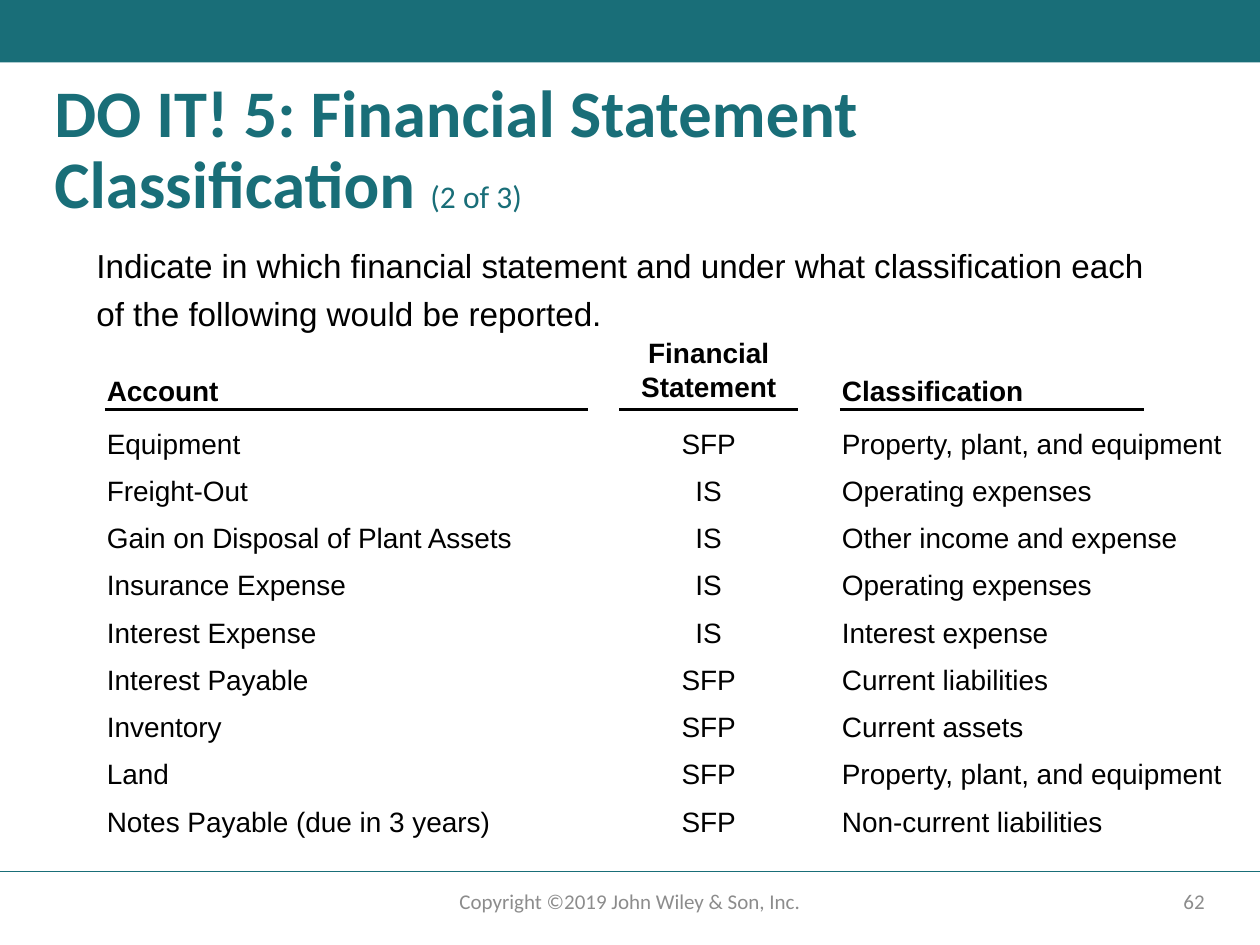
from pptx import Presentation
from pptx.dml.color import RGBColor as Rgb
from pptx.enum.shapes import MSO_CONNECTOR as Conn, MSO_SHAPE as Kind
from pptx.enum.text import MSO_ANCHOR as Anchor, PP_ALIGN as Align
from pptx.oxml.ns import qn
from pptx.util import Inches, Pt
from lxml.etree import SubElement

# Grid of 120 columns by 90 rows; every box is (left, top, width, height)
COLS, ROWS = 120, 90
WIDE, HIGH = Inches(10), Inches(7.5)
HUES = {"teal": "196E78", "ink": "000000", "gray": "8C8C8C", "paper": "FFFFFF"}

BODY = {"name": "Arial", "size": Pt(16), "bold": False}
HEAD = {**BODY, "bold": True}
LEAD = {**BODY, "size": Pt(19)}
TITLE = {"name": "Calibri", "size": Pt(38), "bold": True}
PART = {**TITLE, "size": Pt(18), "bold": False}
FOOT = {**PART, "size": Pt(12)}

# Column name, text left, text width, rule left, rule width, alignment
FIELDS = [
    ("Account", 9, 49, 10, 46, Align.LEFT),
    ("Financial Statement", 59, 17, 59, 17, Align.CENTER),
    ("Classification", 79, 39, 80, 29, Align.LEFT),
]
ITEMS = [
    ("Equipment", "SFP", "Property, plant, and equipment"),
    ("Freight-Out", "IS", "Operating expenses"),
    ("Gain on Disposal of Plant Assets", "IS", "Other income and expense"),
    ("Insurance Expense", "IS", "Operating expenses"),
    ("Interest Expense", "IS", "Interest expense"),
    ("Interest Payable", "SFP", "Current liabilities"),
    ("Inventory", "SFP", "Current assets"),
    ("Land", "SFP", "Property, plant, and equipment"),
    ("Notes Payable (due in 3 years)", "SFP", "Non-current liabilities"),
]


def place(box):
    x, y, w, h = box
    col, row = WIDE / COLS, HIGH / ROWS
    return [round(n) for n in (x * col, y * row, w * col, h * row)]


def block(slide, box, hue):
    shape = slide.shapes.add_shape(Kind.RECTANGLE, *place(box))
    shape.shadow.inherit = False
    shape.fill.solid()
    shape.fill.fore_color.rgb = Rgb.from_string(HUES[hue])
    shape.line.fill.background()
    return shape


def rule(slide, x, y, w, hue, width):
    left, top, span, _ = place((x, y, w, 0))
    line = slide.shapes.add_connector(Conn.STRAIGHT, left, top, left + span, top)
    line.line.color.rgb = Rgb.from_string(HUES[hue])
    line.line.width = Pt(width)
    SubElement(line._element.spPr, qn("a:effectLst"))


def write(shape, runs, hue="ink", align=Align.LEFT, anchor=Anchor.TOP, lead=1.0):
    frame = shape.text_frame
    frame.word_wrap = True
    frame.vertical_anchor = anchor
    para = frame.paragraphs[0]
    para.alignment, para.line_spacing = align, lead
    for words, look in runs:
        run = para.add_run()
        run.text = words
        for key, value in look.items():
            setattr(run.font, key, value)
        run.font.color.rgb = Rgb.from_string(HUES[hue])


def label(slide, box, runs, **style):
    write(slide.shapes.add_textbox(*place(box)), runs, **style)


def header(slide, box):
    x, y, w, h = box
    block(slide, (x, y, w, h * 0.27), "teal")
    runs = [("DO IT! 5: Financial Statement Classification ", TITLE),
            ("(2 of 3)", PART)]
    label(slide, (x + 4, y + 7, w - 8, 15), runs, hue="teal", lead=0.9)


def intro(slide, box):
    words = ("Indicate in which financial statement and under what "
             "classification each of the following would be reported.")
    write(block(slide, box, "paper"), [(words, LEAD)], lead=1.2)


def ledger(slide, box):
    x, y, _, h = box
    base = y + 7.6  # rule under the column names
    step = (h - 8.6) / len(ITEMS)
    for num, (name, left, width, start, span, align) in enumerate(FIELDS):
        # Column name: the middle one takes two lines and a wider box
        pad, rise = (1, 7.6) if align == Align.CENTER else (0, 4)
        spot = (x + left - pad, base - rise, width + 2 * pad, rise + 0.4)
        label(slide, spot, [(name, HEAD)], align=align)
        rule(slide, x + start, base, span, "ink", 1.5)
        # Entries
        for row, item in enumerate(ITEMS):
            spot = (x + left, base + 1 + row * step, width, 4.4)
            label(slide, spot, [(item[num], BODY)], align=align)


def footer(slide, box):
    x, y, w, h = box
    rule(slide, x, y, w, "teal", 1)
    style = {"hue": "gray", "anchor": Anchor.MIDDLE}
    label(slide, (x + w * 0.33, y + 0.4, w * 0.34, h - 2.2),
          [("Copyright ©2019 John Wiley & Son, Inc.", FOOT)],
          align=Align.CENTER, **style)
    label(slide, (x + w * 0.71, y + 0.4, w * 0.256, h - 2.2),
          [("62", FOOT)], align=Align.RIGHT, **style)


def main():
    deck = Presentation()
    deck.slide_width, deck.slide_height = WIDE, HIGH
    slide = deck.slides.add_slide(deck.slide_layouts[6])
    header(slide, (0, 0, COLS, 22))
    intro(slide, (8, 22, 105, 10))
    ledger(slide, (0, 31.4, COLS, 49.1))
    footer(slide, (0, 83, COLS, 7))
    deck.save("out.pptx")


if __name__ == "__main__":
    main()
